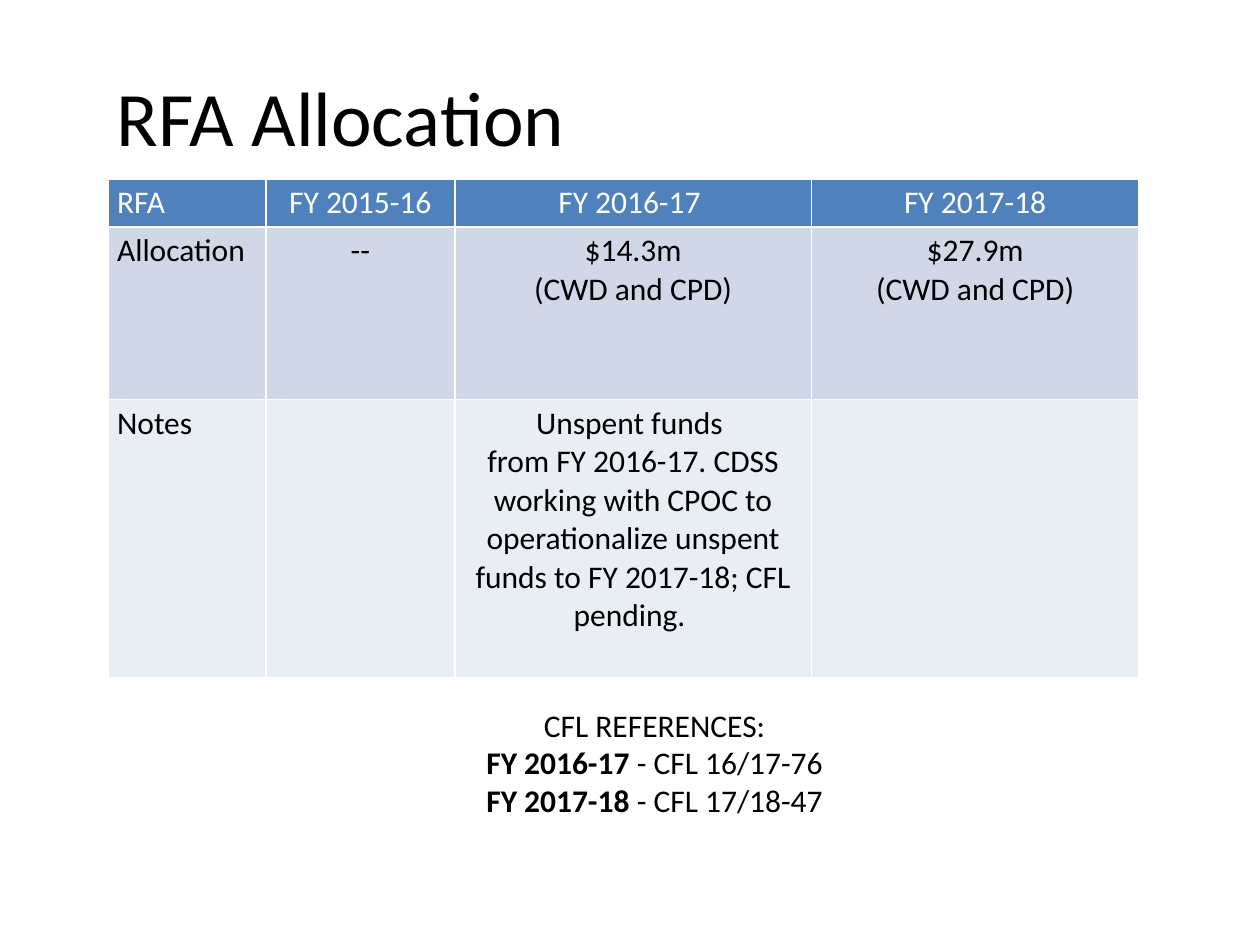
from pptx import Presentation
from pptx.dml.color import RGBColor
from pptx.enum.text import MSO_ANCHOR as Anchor, PP_ALIGN as Align
from pptx.util import Inches, Pt

BLACK = RGBColor(0x00, 0x00, 0x00)
WHITE = RGBColor(0xFF, 0xFF, 0xFF)
HEADER_BLUE = RGBColor(0x4F, 0x81, 0xBD)
BAND_BLUE = RGBColor(0xD0, 0xD8, 0xE8)
BAND_PALE = RGBColor(0xE9, 0xED, 0xF4)

COLUMN_WIDTHS = [1.25, 1.5, 2.83, 2.6]
ROW_HEIGHTS = [0.37, 1.37, 2.21]
ROW_STYLES = [(HEADER_BLUE, WHITE), (BAND_BLUE, BLACK), (BAND_PALE, BLACK)]
ALLOCATIONS = [
    ["RFA", "FY 2015-16", "FY 2016-17 ", "FY 2017-18"],
    ["Allocation", "--", "$14.3m\n(CWD and CPD)", "$27.9m\n(CWD and CPD)"],
    ["Notes", "",
     "Unspent funds \nfrom FY 2016-17. CDSS working with CPOC to operationalize "
     "unspent funds to FY 2017-18; CFL pending. ", ""],
]
REFERENCES = [
    [("CFL REFERENCES:", False)],
    [("FY 2016-17 ", True), ("- CFL 16/17-76", False)],
    [("FY 2017-18 ", True), ("- CFL 17/18-47", False)],
]


def style_paragraph(paragraph, size, color=BLACK, align=Align.LEFT):
    paragraph.alignment = align
    paragraph.font.name = "Calibri"
    paragraph.font.size = Pt(size)
    paragraph.font.color.rgb = color


def add_text(slide, left, top, width, height, lines, size, align, anchor):
    frame = slide.shapes.add_textbox(
        Inches(left), Inches(top), Inches(width), Inches(height)).text_frame
    frame.word_wrap = True
    frame.vertical_anchor = anchor
    for index, line in enumerate(lines):
        paragraph = frame.add_paragraph() if index else frame.paragraphs[0]
        style_paragraph(paragraph, size, align=align)
        for text, bold in line:
            run = paragraph.add_run()
            run.text = text
            run.font.bold = bold


def fill_cell(cell, text, fill, color, align):
    cell.fill.solid()
    cell.fill.fore_color.rgb = fill
    cell.margin_left = cell.margin_right = Inches(0.07)
    cell.margin_top = cell.margin_bottom = Inches(0.04)
    cell.text = text
    for paragraph in cell.text_frame.paragraphs:
        style_paragraph(paragraph, 18, color, align)
        paragraph.font.bold = False
        for run in paragraph.runs:
            run.font.bold = False


def add_allocation_table(slide, left, top):
    table = slide.shapes.add_table(
        len(ROW_HEIGHTS), len(COLUMN_WIDTHS), Inches(left), Inches(top),
        Inches(sum(COLUMN_WIDTHS)), Inches(sum(ROW_HEIGHTS))).table
    for column, width in zip(table.columns, COLUMN_WIDTHS):
        column.width = Inches(width)
    for row, height, texts, (fill, color) in zip(
            table.rows, ROW_HEIGHTS, ALLOCATIONS, ROW_STYLES):
        row.height = Inches(height)
        for index, (cell, text) in enumerate(zip(row.cells, texts)):
            align = Align.CENTER if index else Align.LEFT
            fill_cell(cell, text, fill, color, align)


def main():
    prs = Presentation()
    prs.slide_width, prs.slide_height = Inches(10), Inches(7.5)
    slide = prs.slides.add_slide(prs.slide_layouts[6])
    add_text(slide, 0.83, 0.29, 8.83, 1.25, [[("RFA Allocation", False)]],
             44, Align.LEFT, Anchor.MIDDLE)
    add_allocation_table(slide, 0.86, 1.42)
    add_text(slide, 2.64, 5.55, 5.11, 1.01, REFERENCES,
             18, Align.CENTER, Anchor.TOP)
    prs.save("out.pptx")


if __name__ == "__main__":
    main()
